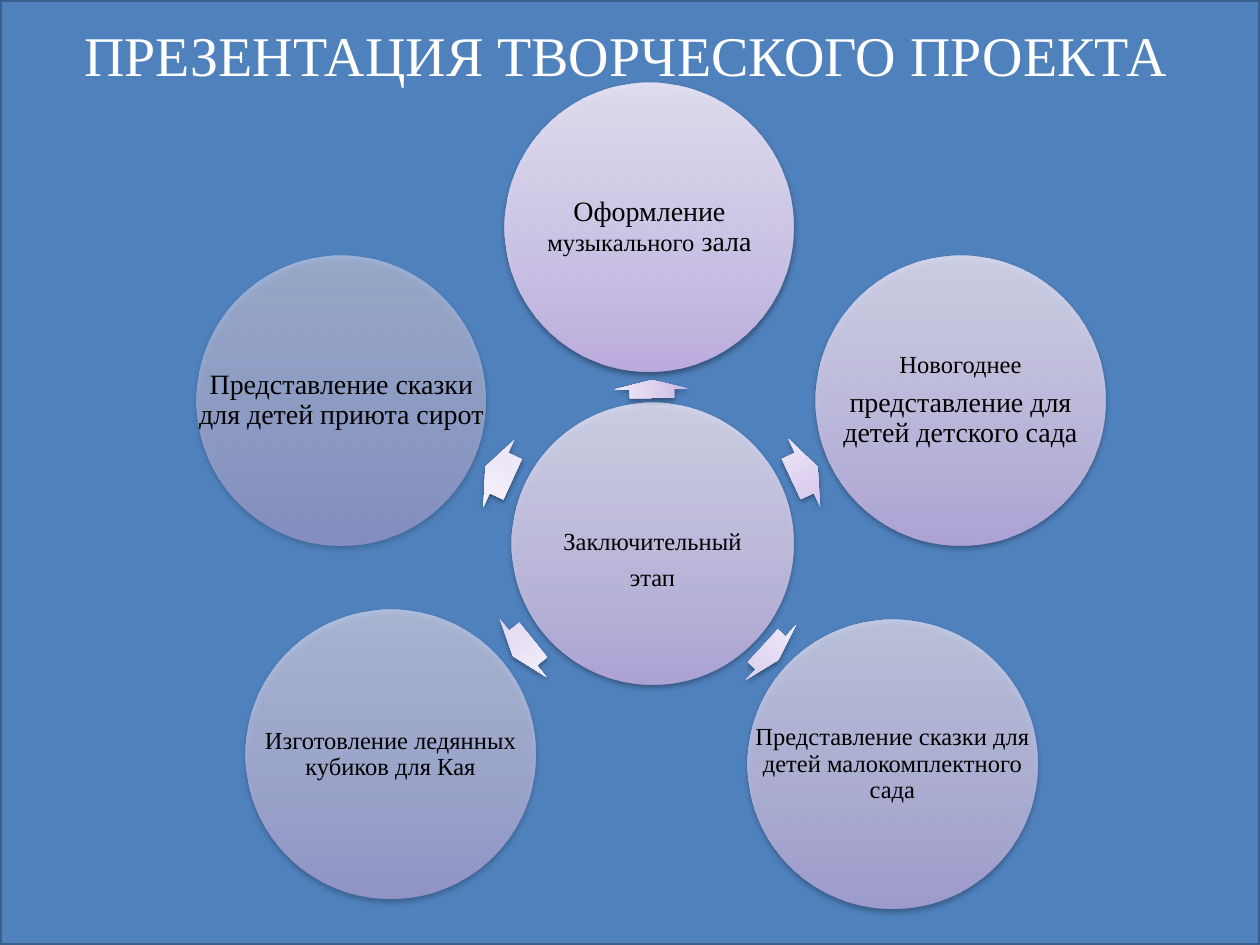
import lxml.etree
import pptx
import pptx.dml.color
import pptx.enum.shapes
import pptx.enum.text
import pptx.oxml
import pptx.oxml.ns
import pptx.util

SCALE = 914400 / 126
FONT = "Times New Roman"
SHAPES = pptx.enum.shapes.MSO_SHAPE
CIRCLE_COLORS = ("C9B5E8", "D8CBEE", "F0EAF9")
STOPS = (0, 35, 100)
INSET = 2

TITLE = "ПРЕЗЕНТАЦИЯ ТВОРЧЕСКОГО ПРОЕКТА"

# Each paragraph is a list of (text, size in points).
CENTER = {
    "box": (512, 403, 281, 281),
    "opacity": 80,
    "paragraphs": [[("Заключительный", 14)], [("этап", 14)]],
    "top_inset": 36,
}

CIRCLE_SIZE = 289
ARROW_HEIGHT = 74
STEPS = [
    {"at": (505, 83), "opacity": 90,
     "paragraphs": [[("Оформление ", 16), ("музыкального", 14), (" зала", 16)]],
     "arrow": (643, 352, 18), "rotation": 269.4, "colors": ("C8B5E4", "D8CBEB", "F0EBF8")},
    {"at": (816, 256), "opacity": 80,
     "paragraphs": [[("Новогоднее", 14)], [("представление для детей детского сада", 16)]],
     "arrow": (790, 436, 29), "rotation": 335, "colors": ("CEBCE9", "DCD0EF", "F1ECF9")},
    {"at": (748, 620), "opacity": 70,
     "paragraphs": [[("Представление сказки для детей малокомплектного сада", 14)]],
     "arrow": (760, 616, 21), "rotation": 42.6, "colors": ("D5C5EC", "E1D6F1", "F3EFFA")},
    {"at": (246, 610), "opacity": 60,
     "paragraphs": [[("Изготовление ледянных кубиков для Кая", 14)]],
     "arrow": (510, 611, 26), "rotation": 141.2, "colors": ("DDD1F0", "E6DEF4", "F5F2FB")},
    {"at": (197, 256), "opacity": 50,
     "paragraphs": [[("Представление сказки для детей приюта сирот", 16)]],
     "arrow": (484, 436, 30), "rotation": 204.8, "colors": ("E6DEF4", "EDE7F7", "F8F5FC")},
]


def px(value):
    return pptx.util.Emu(round(value * SCALE))


def color(value):
    return pptx.dml.color.RGBColor.from_string(value)


def add_shape(slide, kind, box):
    shape = slide.shapes.add_shape(kind, *map(px, box))
    shape.shadow.inherit = False
    return shape


def style_shape(shape, colors, opacity=100):
    """Give a bottom-to-top gradient, no outline and a soft shadow below."""
    shape.line.fill.background()
    namespace = pptx.oxml.ns.nsdecls("a")
    stops = "".join(
        f'<a:gs pos="{position * 1000}"><a:srgbClr val="{value}">'
        f'<a:alpha val="{opacity * 1000}"/></a:srgbClr></a:gs>'
        for position, value in zip(STOPS, colors))
    gradient = pptx.oxml.parse_xml(
        f'<a:gradFill {namespace} rotWithShape="1"><a:gsLst>{stops}</a:gsLst>'
        '<a:lin ang="16200000" scaled="0"/></a:gradFill>')
    geometry = shape._element.spPr.find(pptx.oxml.ns.qn("a:prstGeom"))
    geometry.addnext(gradient)
    effects = shape._element.spPr.find(pptx.oxml.ns.qn("a:effectLst"))
    effects.append(pptx.oxml.parse_xml(
        f'<a:outerShdw {namespace} blurRad="39400" dist="20300" dir="5400000" rotWithShape="0">'
        '<a:srgbClr val="000000"><a:alpha val="38000"/></a:srgbClr></a:outerShdw>'))


def add_text(slide, box, paragraphs, font_color, top_inset=INSET, line_spacing=1.0, space_after=0):
    text_box = slide.shapes.add_textbox(*map(px, box))
    frame = text_box.text_frame
    frame.word_wrap = True
    frame.vertical_anchor = pptx.enum.text.MSO_ANCHOR.MIDDLE
    frame.margin_left = frame.margin_right = frame.margin_bottom = px(INSET)
    frame.margin_top = px(top_inset)
    for index, runs in enumerate(paragraphs):
        paragraph = frame.add_paragraph() if index else frame.paragraphs[0]
        paragraph.alignment = pptx.enum.text.PP_ALIGN.CENTER
        paragraph.line_spacing = line_spacing
        paragraph.space_after = pptx.util.Pt(space_after)
        for text, size in runs:
            run = paragraph.add_run()
            run.text = text
            run.font.name = FONT
            run.font.size = pptx.util.Pt(size)
            run.font.color.rgb = color(font_color)


def add_circle(slide, box, opacity, paragraphs, top_inset=INSET):
    style_shape(add_shape(slide, SHAPES.OVAL, box), CIRCLE_COLORS, opacity)
    add_text(slide, box, paragraphs, "000000", top_inset, line_spacing=0.9, space_after=5)


def add_arrow(slide, box, rotation, colors):
    arrow = add_shape(slide, SHAPES.RIGHT_ARROW, box)
    arrow.adjustments[0] = 0.6
    arrow.adjustments[1] = 0.5
    arrow.rotation = rotation
    style_shape(arrow, colors)


def main():
    presentation = pptx.Presentation()
    presentation.slide_width, presentation.slide_height = px(1260), px(945)
    slide = presentation.slides.add_slide(presentation.slide_layouts[6])

    background = add_shape(slide, SHAPES.RECTANGLE, (0, 0, 1260, 945))
    background.fill.solid()
    background.fill.fore_color.rgb = color("4F81BD")
    background.line.color.rgb = color("3A5F8C")
    background.line.width = pptx.util.Pt(2)

    add_text(slide, (59, 0, 1134, 108), [[(TITLE, 32)]], "FFFFFF")
    add_circle(slide, **CENTER)
    for step in STEPS:
        add_arrow(slide, (*step["arrow"], ARROW_HEIGHT), step["rotation"], step["colors"])
        add_circle(slide, (*step["at"], CIRCLE_SIZE, CIRCLE_SIZE), step["opacity"], step["paragraphs"])

    presentation.save("out.pptx")


if __name__ == "__main__":
    main()
